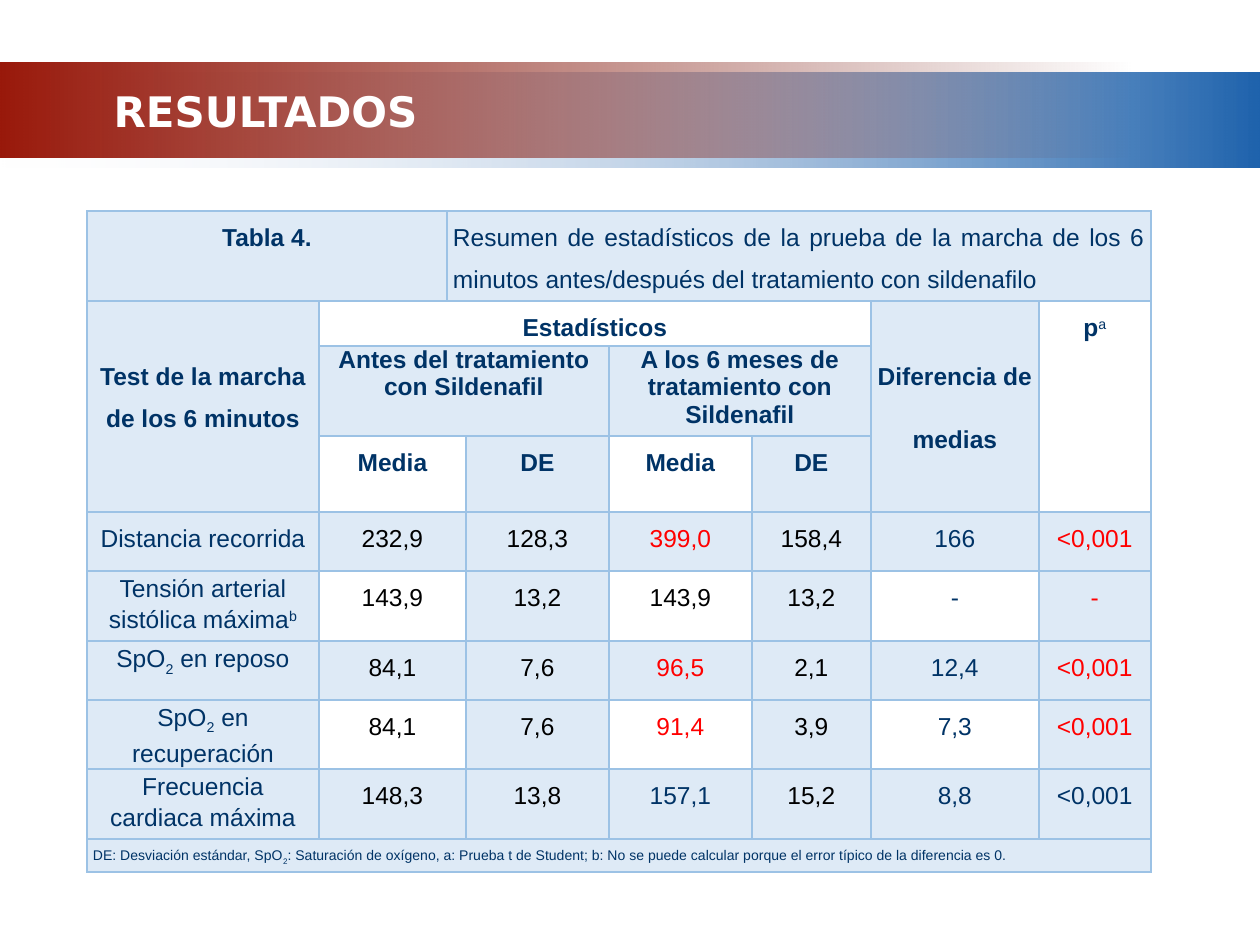
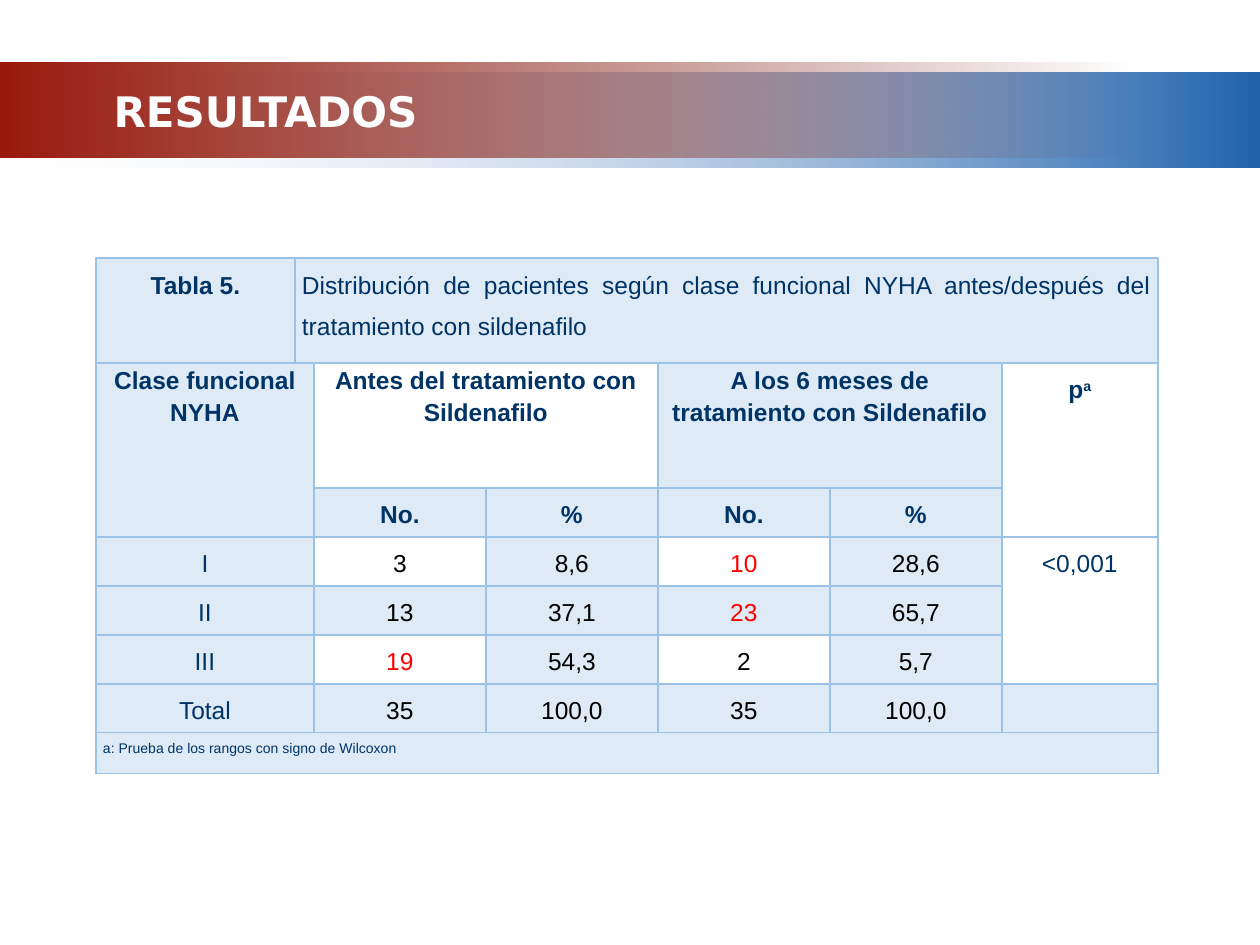
from dataclasses import dataclass

from lxml import etree
from pptx import Presentation
from pptx import util as u
from pptx.dml.color import RGBColor
from pptx.enum import shapes, text
from pptx.oxml.ns import qn


@dataclass(frozen=True)
class Theme:
    navy: str = "003366"
    black: str = "000000"
    red: str = "FF0000"
    white: str = "FFFFFF"
    cell: str = "DEEAF6"
    border: str = "9CC2E5"
    body_font: str = "Arial"
    title_font: str = "DejaVu Sans"
    title_size: int = 24
    body_size: int = 14
    note_size: int = 8


theme = Theme()
PIXEL = 914400 / 126
CENTER, JUSTIFY = text.PP_ALIGN.CENTER, text.PP_ALIGN.JUSTIFY

# style: bold, line spacing, alignment, size
STYLES = {
    "head": (True, 1.5, CENTER, theme.body_size),
    "tight head": (True, 1.15, CENTER, theme.body_size),
    "single head": (True, 1.0, CENTER, theme.body_size),
    "caption": (False, 1.5, JUSTIFY, theme.body_size),
    "data": (False, 1.5, CENTER, theme.body_size),
    "tight data": (False, 1.15, CENTER, theme.body_size),
    "note": (False, 1.5, JUSTIFY, theme.note_size),
}
COLOURS = {"k": theme.black, "r": theme.red, "n": theme.navy}
BASELINES = {"^": "30000", "_": "-25000"}

# In cell text, "|" parts runs, "^" raises a run, "_" lowers it, "\n" starts a paragraph.
# fixed: row, column, row span, column span, text, style, filled, top margin
# body: label, label style, values, one colour letter for each value
walk_test = dict(
    left=87, top=211, pad=6, bold_mark=False, first_body_row=4,
    columns=[232, 128, 19, 143, 143, 119, 168, 112],
    rows=[90, 45, 90, 76, 59, 70, 59, 69, 70, 33],
    label_span=1,
    value_columns=[(1, 2), (3, 1), (4, 1), (5, 1), (6, 1), (7, 1)],
    fixed=[
        (0, 0, 1, 2, "Tabla 4.", "head", True, 0),
        (0, 2, 1, 6, "Resumen de estadísticos de la prueba de la marcha de los 6 minutos "
                     "antes/después del tratamiento con sildenafilo", "caption", True, 0),
        (1, 0, 3, 1, "Test de la marcha de los 6 minutos", "head", True, 49),
        (1, 1, 1, 5, "Estadísticos", "head", False, 0),
        (1, 6, 3, 1, "Diferencia de\nmedias", "head", True, 49),
        (1, 7, 3, 1, "p|^a", "head", False, 0),
        (2, 1, 1, 3, "Antes del tratamiento con Sildenafil", "single head", True, 0),
        (2, 4, 1, 2, "A los 6 meses de tratamiento con Sildenafil", "single head", True, 0),
        (3, 1, 1, 2, "Media", "head", False, 0),
        (3, 3, 1, 1, "DE", "head", True, 0),
        (3, 4, 1, 1, "Media", "head", False, 0),
        (3, 5, 1, 1, "DE", "head", True, 0),
        (9, 0, 1, 8, "DE: Desviación estándar, SpO|_2|: Saturación de oxígeno, a: Prueba t de "
                     "Student; b: No se puede calcular porque el error típico de la diferencia "
                     "es 0.", "note", True, 0),
    ],
    body=[
        ("Distancia recorrida", "data", "232,9 128,3 399,0 158,4 166 <0,001", "kkrknr"),
        ("Tensión arterial sistólica máxima|^b", "tight data",
         "143,9 13,2 143,9 13,2 - -", "kkkknr"),
        ("SpO|_2| en reposo", "tight data", "84,1 7,6 96,5 2,1 12,4 <0,001", "kkrknr"),
        ("SpO|_2| en recuperación", "tight data", "84,1 7,6 91,4 3,9 7,3 <0,001", "kkrknr"),
        ("Frecuencia cardiaca máxima", "tight data",
         "148,3 13,8 157,1 15,2 8,8 <0,001", "kknknn"),
    ],
    banded_rows=0,
)

functional_class = dict(
    left=96, top=258, pad=7, bold_mark=True, first_body_row=3,
    columns=[199, 18, 172, 172, 172, 172, 156],
    rows=[105, 125, 49, 49, 49, 49, 49, 41],
    label_span=2,
    value_columns=[(2, 1), (3, 1), (4, 1), (5, 1)],
    fixed=[
        (0, 0, 1, 1, "Tabla 5.", "head", True, 0),
        (0, 1, 1, 6, "Distribución de pacientes según clase funcional NYHA antes/después del "
                     "tratamiento con sildenafilo", "caption", True, 0),
        (1, 0, 2, 2, "Clase funcional NYHA", "tight head", True, 0),
        (1, 2, 1, 2, "Antes del tratamiento con Sildenafilo", "tight head", False, 0),
        (1, 4, 1, 2, "A los 6 meses de tratamiento con Sildenafilo", "tight head", True, 0),
        (1, 6, 2, 1, "p|^a", "head", False, 0),
        (2, 2, 1, 1, "No.", "head", True, 0),
        (2, 3, 1, 1, "%", "head", True, 0),
        (2, 4, 1, 1, "No.", "head", True, 0),
        (2, 5, 1, 1, "%", "head", True, 0),
        (3, 6, 3, 1, "<0,001", "data", False, 0),
        (6, 6, 1, 1, "", "data", True, 0),
        (7, 0, 1, 7, "a: Prueba de los rangos con signo de Wilcoxon", "note", True, 0),
    ],
    body=[
        ("I", "data", "3 8,6 10 28,6", "kkrk"),
        ("II", "data", "13 37,1 23 65,7", "kkrk"),
        ("III", "data", "19 54,3 2 5,7", "rkkk"),
        ("Total", "data", "35 100,0 35 100,0", "kkkk"),
    ],
    banded_rows=1,
)


def px(length):
    return u.Emu(round(length * PIXEL))


def add_run(paragraph, words, font_name, size, colour, bold):
    run = paragraph.add_run()
    run.text = words
    run.font.name = font_name
    run.font.size = u.Pt(size)
    run.font.bold = bold
    run.font.color.rgb = RGBColor.from_string(colour)
    return run


presentation = Presentation()
presentation.slide_width, presentation.slide_height = px(1260), px(945)
layout = presentation.slide_layouts[5]

for slide_index, content in enumerate([walk_test, functional_class]):
    slide = presentation.slides.add_slide(layout)

    # The two gradient bands are made once and kept on the layout.
    if slide_index == 0:
        bands = [(73, 1260, [("F1F2F7", 0), ("1F63AD", 100)]),
                 (63, 1134, [("99190B", 100), ("6D1208", 0)])]
        for band_index, (top, width, stops) in enumerate(bands):
            band = slide.shapes.add_shape(
                shapes.MSO_SHAPE.RECTANGLE, 0, px(top), px(width), px(95))
            band.shadow.inherit = False
            band.line.fill.background()
            band.fill.gradient()
            band.fill.gradient_angle = 0
            for stop, (colour, opacity) in zip(band.fill.gradient_stops, stops):
                stop.color.rgb = RGBColor.from_string(colour)
            for colour_element, (colour, opacity) in zip(
                    band.element.iter(qn("a:srgbClr")), stops):
                etree.SubElement(colour_element, qn("a:alpha"), val=str(opacity * 1000))
            next(band.element.iter(qn("p:cNvPr"))).set("id", str(100 + band_index))
            layout.shapes.element.insert(2 + band_index, band.element)

    title = slide.shapes.title
    title.left, title.top, title.width, title.height = px(14), px(81), px(503), px(60)
    title.text_frame.vertical_anchor = text.MSO_ANCHOR.MIDDLE
    title.text_frame.auto_size = text.MSO_AUTO_SIZE.NONE
    paragraph = title.text_frame.paragraphs[0]
    paragraph.alignment = CENTER
    add_run(paragraph, "RESULTADOS", theme.title_font, theme.title_size, theme.white, True)

    columns, rows = content["columns"], content["rows"]
    table = slide.shapes.add_table(
        len(rows), len(columns), px(content["left"]), px(content["top"]),
        px(sum(columns)), px(sum(rows))).table
    table.first_row = table.horz_banding = False
    for column, width in zip(table.columns, columns):
        column.width = px(width)
    for row, height in zip(table.rows, rows):
        row.height = px(height)

    cells = [(*entry, theme.navy) for entry in content["fixed"]]
    for body_index, (label, label_style, values, letters) in enumerate(content["body"]):
        row = content["first_body_row"] + body_index
        banded = body_index % 2 == content["banded_rows"]
        cells.append((row, 0, 1, content["label_span"], label, label_style, True, 0, theme.navy))
        for position, ((column, span), value, letter) in enumerate(
                zip(content["value_columns"], values.split(), letters)):
            filled = banded or position % 2 == 1
            cells.append((row, column, 1, span, value, "data", filled, 0, COLOURS[letter]))

    for cell in table.iter_cells():
        cell.margin_left = cell.margin_right = px(content["pad"])
        cell.margin_top = cell.margin_bottom = 0
        cell.fill.background()
        properties = cell._tc.get_or_add_tcPr()
        for side_index, side in enumerate(["a:lnL", "a:lnR", "a:lnT", "a:lnB"]):
            line = etree.Element(qn(side), w=str(u.Pt(1)))
            line_fill = etree.SubElement(line, qn("a:solidFill"))
            etree.SubElement(line_fill, qn("a:srgbClr"), val=theme.border)
            properties.insert(side_index, line)

    for row, column, row_span, column_span, words, style, filled, margin, colour in cells:
        cell = table.cell(row, column)
        if row_span * column_span > 1:
            cell.merge(table.cell(row + row_span - 1, column + column_span - 1))
        cell.margin_top = px(margin)
        if filled:
            cell.fill.solid()
            cell.fill.fore_color.rgb = RGBColor.from_string(theme.cell)
        if not words:
            continue
        bold, spacing, alignment, size = STYLES[style]
        for line_index, line in enumerate(words.split("\n")):
            frame = cell.text_frame
            paragraph = frame.add_paragraph() if line_index else frame.paragraphs[0]
            paragraph.alignment = alignment
            paragraph.line_spacing = spacing
            if line_index:
                paragraph.space_before = u.Pt(12)
            for part in line.split("|"):
                baseline = BASELINES.get(part[0])
                run_bold = bold and (baseline is None or content["bold_mark"])
                run = add_run(paragraph, part[1:] if baseline else part,
                              theme.body_font, size, colour, run_bold)
                if baseline:
                    run.font._element.set("baseline", baseline)

presentation.save("out.pptx")
